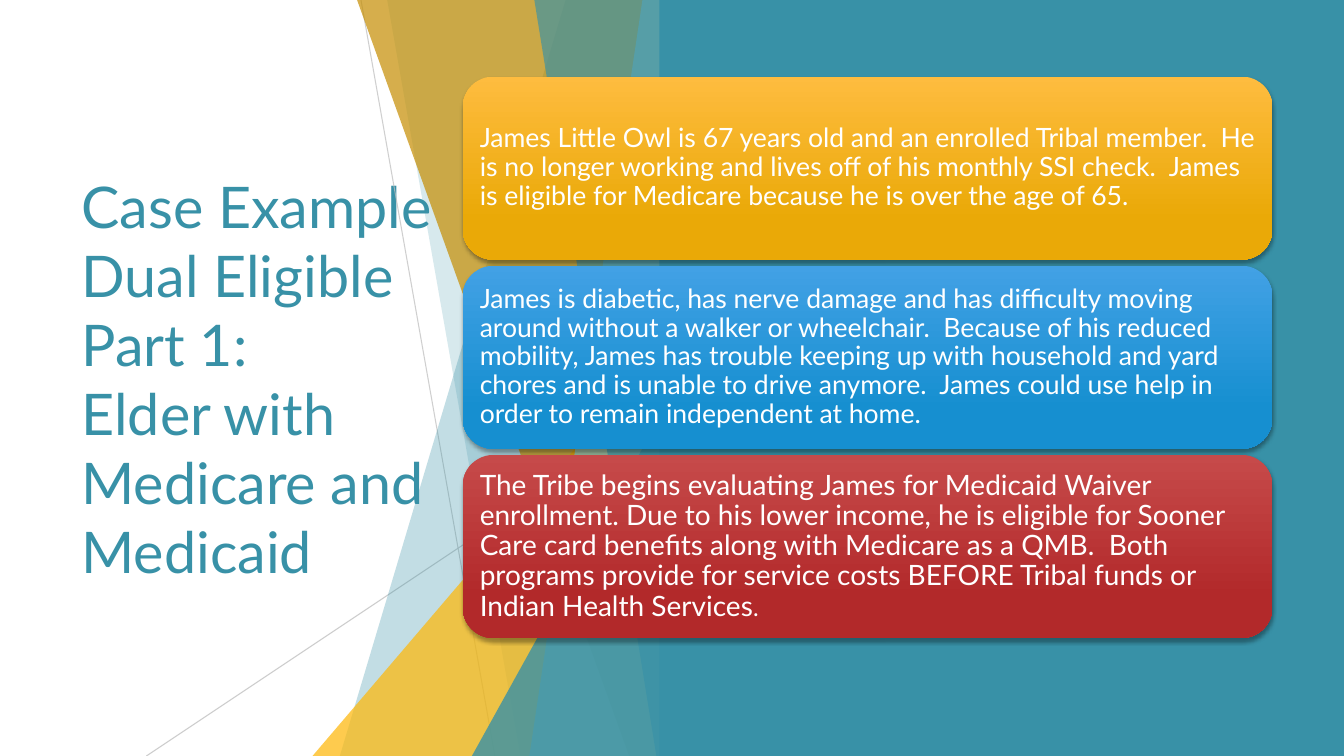
from lxml import etree
from pptx import Presentation
from pptx.dml.color import RGBColor
from pptx.enum.shapes import MSO_CONNECTOR, MSO_SHAPE
from pptx.enum.text import MSO_ANCHOR, PP_ALIGN
from pptx.oxml.ns import qn
from pptx.util import Inches, Pt

RECTANGLE = MSO_SHAPE.RECTANGLE
ROUNDED = MSO_SHAPE.ROUNDED_RECTANGLE
TRIANGLE = MSO_SHAPE.ISOSCELES_TRIANGLE
STRAIGHT = MSO_CONNECTOR.STRAIGHT
MIDDLE = MSO_ANCHOR.MIDDLE
LEFT = PP_ALIGN.LEFT

FONT = "Lato"
TEAL, AMBER, OCHRE, SKY = "3891A7", "FEB80A", "C58D01", "7EC3D4"
WHITE, GREY = "FFFFFF", "BFBFBF"
SLIDE_WIDTH, SLIDE_HEIGHT = 13.33, 7.5

TITLE = "Case Example Dual Eligible \vPart 1:\vElder with Medicare and Medicaid"

# Percent of the ribbon box: line start, line end, opacity
RIBBON_LINES = [((13.5, 0), (50.8, 100), 75), ((100, 53.7), (-46.3, 100), 80)]
# Percent of the ribbon box: left edge at top, left edge at bottom, colour, opacity
BACK_BANDS = [(70.5, 7.6, TEAL, 30), (20.8, 57.9, TEAL, 20)]
FRONT_BANDS = [(12.4, 88.2, OCHRE, 70), (91.9, 60.4, SKY, 70), (61.8, 95.8, TEAL, 65)]
# Percent of the ribbon box: left, top, colour, opacity
BACK_WEDGE = (0, 44.4, AMBER, 72)
FRONT_WEDGE = (44.4, 52.4, TEAL, 80)

CARDS = [
    ("FEBC3F", "EAA907", [
        ("James Little Owl is 67 years old and an enrolled Tribal member.  He is no longer "
         "working and lives off of his monthly SSI check.  James is eligible for Medicare "
         "because he is over the age of 65.", 19)]),
    ("42A1E5", "168FD0", [
        ("James is diabetic, has nerve damage and has difficulty moving around without a "
         "walker or wheelchair.  Because of his reduced mobility, James has trouble keeping "
         "up with household and yard chores and is unable to drive anymore.  James could use "
         "help in order to remain independent at home.", 19)]),
    ("C64A4A", "B2292A", [
        ("The Tribe begins evaluating James for Medicaid Waiver enrollment. Due to his lower "
         "income, he is eligible for Sooner Care card benefits along with Medicare as a QMB.  "
         "Both programs provide for service costs BEFORE Tribal funds or Indian Health "
         "Services", 20),
        (".", 17)]),
]


def paint(color_format, color, opacity=100):
    """Give a colour format a hex colour and an opacity in percent."""
    color_format.rgb = RGBColor.from_string(color)
    if opacity < 100:
        for element in color_format._xFill.iter(qn("a:srgbClr")):
            etree.SubElement(element, qn("a:alpha"), val=str(opacity * 1000))


def fill_plain(shape, color, opacity=100):
    """Fill a shape with one colour, without outline or shadow."""
    shape.fill.solid()
    color_element_parent = shape.fill.fore_color
    color_element_parent.rgb = RGBColor.from_string(color)
    set_opacity(shape, opacity)
    shape.line.fill.background()
    shape.shadow.inherit = False


def set_opacity(shape, opacity):
    """Make the colours of a shape or connector translucent."""
    for element in shape._element.spPr.iter(qn("a:srgbClr")):
        etree.SubElement(element, qn("a:alpha"), val=str(opacity * 1000))


def format_run(run, size, color):
    """Set the font, size and colour of a run."""
    run.font.name = FONT
    run.font.size = Pt(size)
    run.font.color.rgb = RGBColor.from_string(color)


def add_title(slide, left, top, width, height):
    """Place the title, centred vertically in its box."""
    text_box = slide.shapes.add_textbox(*map(Inches, (left, top, width, height)))
    frame = text_box.text_frame
    frame.word_wrap = True
    frame.vertical_anchor = MIDDLE
    frame.text = TITLE
    for run in frame.paragraphs[0].runs:
        format_run(run, 41, TEAL)


def add_ribbon(slide, left, top, width, height):
    """Draw the crossing translucent bands, wedges and thin lines in a box."""
    def point(x, y):
        return Inches(left + width * x / 100), Inches(top + height * y / 100)

    def add_band(top_x, bottom_x, color, opacity):
        builder = slide.shapes.build_freeform(*point(top_x, 0), scale=1.0)
        builder.add_line_segments([point(100, 0), point(100, 100), point(bottom_x, 100)])
        fill_plain(builder.convert_to_shape(), color, opacity)

    def add_wedge(x, y, color, opacity):
        start_x, start_y = point(x, y)
        end_x, end_y = point(100, 100)
        wedge = slide.shapes.add_shape(
            TRIANGLE, start_x, start_y, end_x - start_x, end_y - start_y)
        wedge.adjustments[0] = 1
        fill_plain(wedge, color, opacity)

    for start, end, opacity in RIBBON_LINES:
        line = slide.shapes.add_connector(STRAIGHT, *point(*start), *point(*end))
        line.line.color.rgb = RGBColor.from_string(GREY)
        line.line.width = Pt(0.75)
        set_opacity(line, opacity)
        etree.SubElement(line._element.spPr, qn("a:effectLst"))
    for band in BACK_BANDS:
        add_band(*band)
    add_wedge(*BACK_WEDGE)
    for band in FRONT_BANDS:
        add_band(*band)
    add_wedge(*FRONT_WEDGE)


def add_panel(slide, left, top, width, height):
    """Draw the plain panel behind the cards."""
    panel = slide.shapes.add_shape(RECTANGLE, *map(Inches, (left, top, width, height)))
    fill_plain(panel, TEAL)


def add_card_shadow(card):
    """Give a card a soft shadow straight below it."""
    card.shadow.inherit = False
    effects = card._element.spPr.find(qn("a:effectLst"))
    shadow = etree.SubElement(effects, qn("a:outerShdw"), blurRad=str(Pt(3)),
                              dist=str(Pt(2)), dir="5400000", rotWithShape="0")
    color = etree.SubElement(shadow, qn("a:srgbClr"), val="000000")
    etree.SubElement(color, qn("a:alpha"), val="35000")


def add_cards(slide, left, top, width, height, gap=0.06):
    """Stack the case cards at equal heights in a box."""
    card_height = (height - gap * (len(CARDS) - 1)) / len(CARDS)
    for index, (light, dark, parts) in enumerate(CARDS):
        card_top = top + index * (card_height + gap)
        card = slide.shapes.add_shape(
            ROUNDED, *map(Inches, (left, card_top, width, card_height)))
        card.fill.gradient()
        card.fill.gradient_angle = 270
        for stop, color, position in zip(card.fill.gradient_stops, (light, dark), (0, 0.78)):
            stop.color.rgb = RGBColor.from_string(color)
            stop.position = position
        card.line.fill.background()
        add_card_shadow(card)
        frame = card.text_frame
        frame.word_wrap = True
        frame.vertical_anchor = MIDDLE
        frame.margin_left = frame.margin_right = Inches(0.08)
        frame.margin_top = frame.margin_bottom = Inches(0.08)
        paragraph = frame.paragraphs[0]
        paragraph.alignment = LEFT
        paragraph.line_spacing = 0.9
        for text, size in parts:
            run = paragraph.add_run()
            run.text = text
            format_run(run, size, WHITE)


def main():
    """Build the slide and save it."""
    presentation = Presentation()
    presentation.slide_width = Inches(SLIDE_WIDTH)
    presentation.slide_height = Inches(SLIDE_HEIGHT)
    slide = presentation.slides.add_slide(presentation.slide_layouts[6])
    add_title(slide, 0.71, 1.51, 3.88, 4.48)
    add_ribbon(slide, 3.1, 0, 3.56, SLIDE_HEIGHT)
    add_panel(slide, 6.54, 0, SLIDE_WIDTH - 6.54, SLIDE_HEIGHT)
    add_cards(slide, 4.59, 0.76, 8.03, 5.57)
    presentation.save("out.pptx")


if __name__ == "__main__":
    main()
